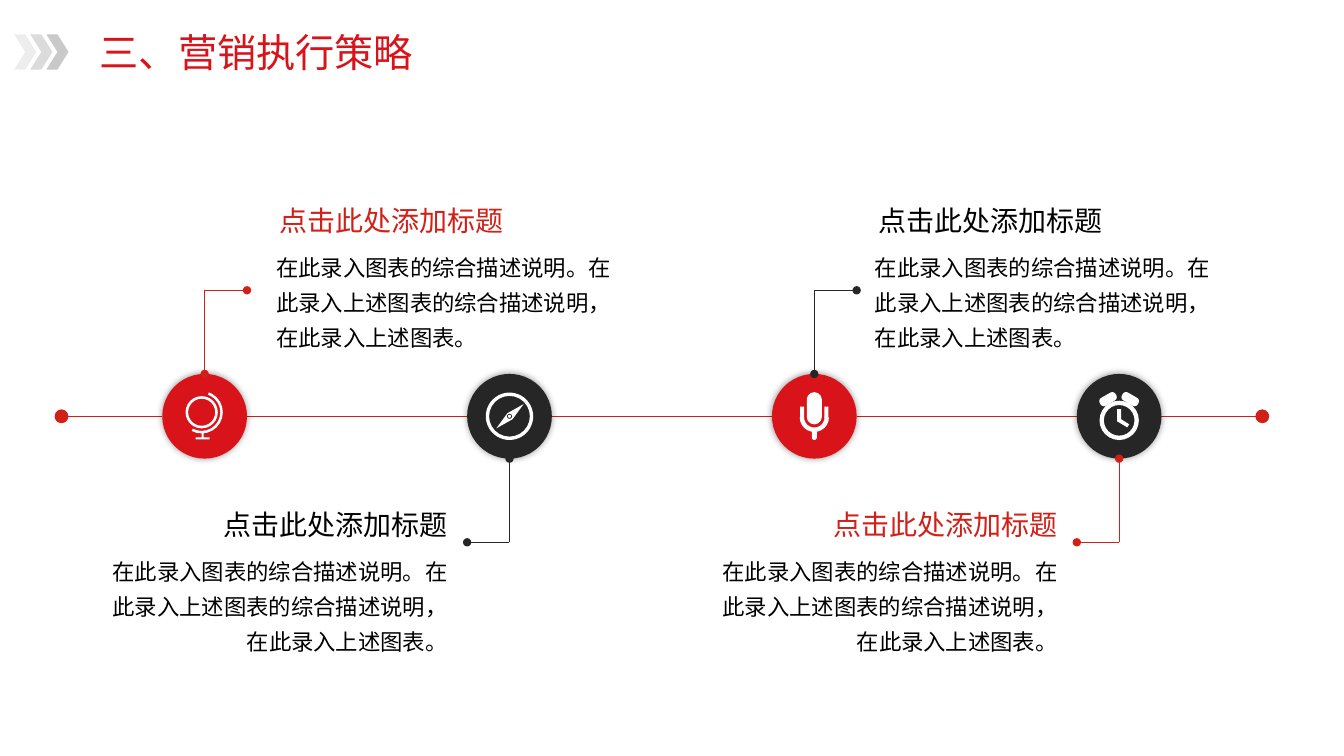
from dataclasses import dataclass

from lxml import etree
from pptx import Presentation, util as u
from pptx.dml import color
from pptx.enum import shapes, text
from pptx.oxml import ns


@dataclass(frozen=True)
class Theme:
    """Colours, fonts and type sizes of the slide."""
    red: str = "D8141A"
    line_red: str = "D12018"
    dark: str = "262626"
    black: str = "000000"
    white: str = "FFFFFF"
    greys: tuple = ("EDEDED", "DBDBDB", "C9C9C9")
    heading_font: str = "Noto Sans CJK JP"
    body_font: str = "Calibri"
    title_size: int = 28
    heading_size: int = 20
    body_size: int = 16


THEME = Theme()
KIND = shapes.MSO_SHAPE
ALIGN = text.PP_ALIGN
RADIUS = 0.42
HEADING = "点击此处添加标题"
BODY = "在此录入图表的综合描述说明。在此录入上述图表的综合描述说明，在此录入上述图表。"


def rgb(value):
    """Turn a hex string into a colour."""
    return color.RGBColor.from_string(value)


def paint(shape, fill):
    """Give a shape a plain fill without line or shadow."""
    shape.fill.solid()
    shape.fill.fore_color.rgb = rgb(fill)
    shape.line.fill.background()
    shape.shadow.inherit = False
    return shape


def add_solid(slide, kind, left, top, width, height, fill, adjustments=(), rotation=0):
    """Add a filled preset shape."""
    shape = slide.shapes.add_shape(
        kind, u.Inches(left), u.Inches(top), u.Inches(width), u.Inches(height))
    for index, value in enumerate(adjustments):
        shape.adjustments[index] = value
    shape.rotation = rotation
    return paint(shape, fill)


def add_centred(slide, kind, x, y, width, height, fill=THEME.white, adjustments=(), rotation=0):
    """Add a filled preset shape around a centre point."""
    return add_solid(slide, kind, x - width / 2, y - height / 2, width, height,
                     fill, adjustments, rotation)


def add_polygon(slide, x, y, points):
    """Add a white polygon whose points are offsets from a centre."""
    corners = [(u.Inches(x + dx), u.Inches(y + dy)) for dx, dy in points]
    builder = slide.shapes.build_freeform(*corners[0])
    builder.add_line_segments(corners[1:], close=True)
    paint(builder.convert_to_shape(), THEME.white)


def add_line(slide, start, end, stroke, head=None, tail=None):
    """Add a thin line with optional round ends of a given size."""
    line = slide.shapes.add_connector(
        shapes.MSO_CONNECTOR.STRAIGHT, *(u.Inches(value) for value in (*start, *end)))
    line.line.color.rgb = rgb(stroke)
    line.line.width = u.Pt(0.5)
    outline = line.line._get_or_add_ln()
    for tag, size in (("a:headEnd", head), ("a:tailEnd", tail)):
        if size:
            etree.SubElement(outline, ns.qn(tag), type="oval", w=size, len=size)
    etree.SubElement(line._element.spPr, ns.qn("a:effectLst"))


def write(shape, words, font, size, ink, alignment, wrap=False, spacing=None):
    """Put one formatted paragraph into a shape."""
    frame = shape.text_frame
    frame.text = words
    frame.word_wrap = wrap
    frame.auto_size = text.MSO_AUTO_SIZE.SHAPE_TO_FIT_TEXT
    frame.vertical_anchor = text.MSO_ANCHOR.TOP
    paragraph = frame.paragraphs[0]
    paragraph.alignment = alignment
    paragraph.line_spacing = spacing
    run = paragraph.runs[0]
    run.font.name = font
    run.font.size = u.Pt(size)
    run.font.color.rgb = rgb(ink)
    etree.SubElement(run.font._element, ns.qn("a:ea"), typeface=THEME.heading_font)


def add_header(slide, left, top):
    """Place the chevrons and the slide title."""
    for index, grey in enumerate(THEME.greys):
        add_solid(slide, KIND.CHEVRON, left + 0.16 * index, top + 0.11, 0.22, 0.35, grey)
    title = slide.shapes.title
    title.left, title.top = u.Inches(left + 0.75), u.Inches(top)
    title.width, title.height = u.Inches(3.34), u.Inches(0.57)
    write(title, "三、营销执行策略", THEME.heading_font, THEME.title_size, THEME.red, ALIGN.LEFT)


def add_globe(slide, x, y):
    """Draw a globe on a stand."""
    add_centred(slide, KIND.DONUT, x - 0.03, y - 0.04, 0.32, 0.32, adjustments=[0.08])
    add_centred(slide, KIND.BLOCK_ARC, x - 0.03, y - 0.04, 0.42, 0.42,
                adjustments=[290 * 0.6, 118 * 0.6, 0.06])
    add_centred(slide, KIND.RECTANGLE, x - 0.02, y + 0.19, 0.02, 0.06)
    add_centred(slide, KIND.RECTANGLE, x - 0.02, y + 0.22, 0.14, 0.02)


def add_compass(slide, x, y):
    """Draw a compass with its needle."""
    add_centred(slide, KIND.DONUT, x, y, 0.47, 0.47, adjustments=[0.07])
    add_polygon(slide, x, y, [(0.14, -0.12), (0.03, 0.03), (-0.13, 0.12), (-0.02, -0.03)])
    add_centred(slide, KIND.OVAL, x, y, 0.05, 0.05, THEME.dark)
    add_centred(slide, KIND.OVAL, x, y, 0.03, 0.03)


def add_microphone(slide, x, y):
    """Draw a microphone in its cradle."""
    add_centred(slide, KIND.ROUNDED_RECTANGLE, x, y - 0.08, 0.15, 0.32, adjustments=[0.5])
    add_centred(slide, KIND.BLOCK_ARC, x, y + 0.01, 0.29, 0.29, adjustments=[0, 108, 0.15])
    for side in (-1, 1):
        add_centred(slide, KIND.RECTANGLE, x + 0.12 * side, y - 0.04, 0.04, 0.11)
    add_centred(slide, KIND.ROUNDED_RECTANGLE, x, y + 0.18, 0.05, 0.11, adjustments=[0.5])


def add_clock(slide, x, y):
    """Draw an alarm clock with two bells."""
    add_centred(slide, KIND.DONUT, x, y + 0.04, 0.39, 0.39, adjustments=[0.11])
    add_polygon(slide, x, y, [(-0.02, -0.07), (0.02, -0.07), (0.02, 0.03),
                              (0.1, 0.08), (0.08, 0.11), (-0.02, 0.05)])
    for side in (-1, 1):
        add_centred(slide, KIND.ROUNDED_RECTANGLE, x + 0.11 * side, y - 0.17, 0.18, 0.09,
                    adjustments=[0.4], rotation=30 * side)


def add_node(slide, x, y, fill, add_icon):
    """Place a shadowed circle and its icon on the timeline."""
    circle = add_centred(slide, KIND.OVAL, x, y, 2 * RADIUS, 2 * RADIUS, fill)
    effects = circle._element.spPr.find(ns.qn("a:effectLst"))
    shadow = etree.SubElement(effects, ns.qn("a:outerShdw"), blurRad=str(u.Pt(5)), dist="0")
    shade = etree.SubElement(shadow, ns.qn("a:srgbClr"), val=THEME.black)
    etree.SubElement(shade, ns.qn("a:alpha"), val="40000")
    add_icon(slide, x, y)


def add_elbow(slide, x, y, side, stroke):
    """Lead from a circle up and right (side 1) or down and left (side -1)."""
    corner = (x, y - 1.25 * side)
    add_line(slide, (x, y - RADIUS * side), corner, stroke, head="med")
    add_line(slide, corner, (x + RADIUS * side, corner[1]), stroke, tail="med")


def add_caption(slide, left, top, side, ink):
    """Place a heading above its description."""
    width, heading_width = 3.67, 2.45
    heading_left = left + 0.02 if side > 0 else left + width - heading_width
    heading = slide.shapes.add_textbox(
        u.Inches(heading_left), u.Inches(top), u.Inches(heading_width), u.Inches(0.44))
    write(heading, HEADING, THEME.heading_font, THEME.heading_size, ink,
          ALIGN.CENTER if side > 0 else ALIGN.RIGHT)
    body = slide.shapes.add_textbox(
        u.Inches(left), u.Inches(top + 0.42), u.Inches(width), u.Inches(1.12))
    write(body, BODY, THEME.body_font, THEME.body_size, THEME.black,
          ALIGN.LEFT if side > 0 else ALIGN.RIGHT, wrap=True, spacing=1.3)


def add_timeline(slide, left, y, width):
    """Place the axis with its four nodes, leaders and captions."""
    first = left + 1.42
    pitch = (width - 2 * 1.42) / 3
    centres = [first + pitch * index for index in range(4)]
    starts = [left] + [x + RADIUS for x in centres]
    ends = [x - RADIUS for x in centres] + [left + width]
    for index, (start, end) in enumerate(zip(starts, ends)):
        add_line(slide, (start, y), (end, y), THEME.line_red,
                 head="lg" if index == 0 else None, tail="lg" if index == 4 else None)
    nodes = [
        (THEME.red, add_globe, 1, THEME.line_red, THEME.line_red, 2.64),
        (THEME.dark, add_compass, -1, THEME.dark, THEME.black, 0.87),
        (THEME.red, add_microphone, 1, THEME.dark, THEME.black, 8.58),
        (THEME.dark, add_clock, -1, THEME.line_red, THEME.line_red, 6.92),
    ]
    for x, (fill, add_icon, side, stroke, ink, caption_left) in zip(centres, nodes):
        add_node(slide, x, y, fill, add_icon)
        add_elbow(slide, x, y, side, stroke)
        add_caption(slide, caption_left, y - 2.16 if side > 0 else y + 0.86, side, ink)


def main():
    """Build and save the presentation."""
    presentation = Presentation()
    presentation.slide_width, presentation.slide_height = u.Inches(13.33), u.Inches(7.5)
    slide = presentation.slides.add_slide(presentation.slide_layouts[5])
    add_header(slide, 0.14, 0.23)
    add_timeline(slide, 0.61, 4.13, 11.91)
    presentation.save("out.pptx")


if __name__ == "__main__":
    main()
